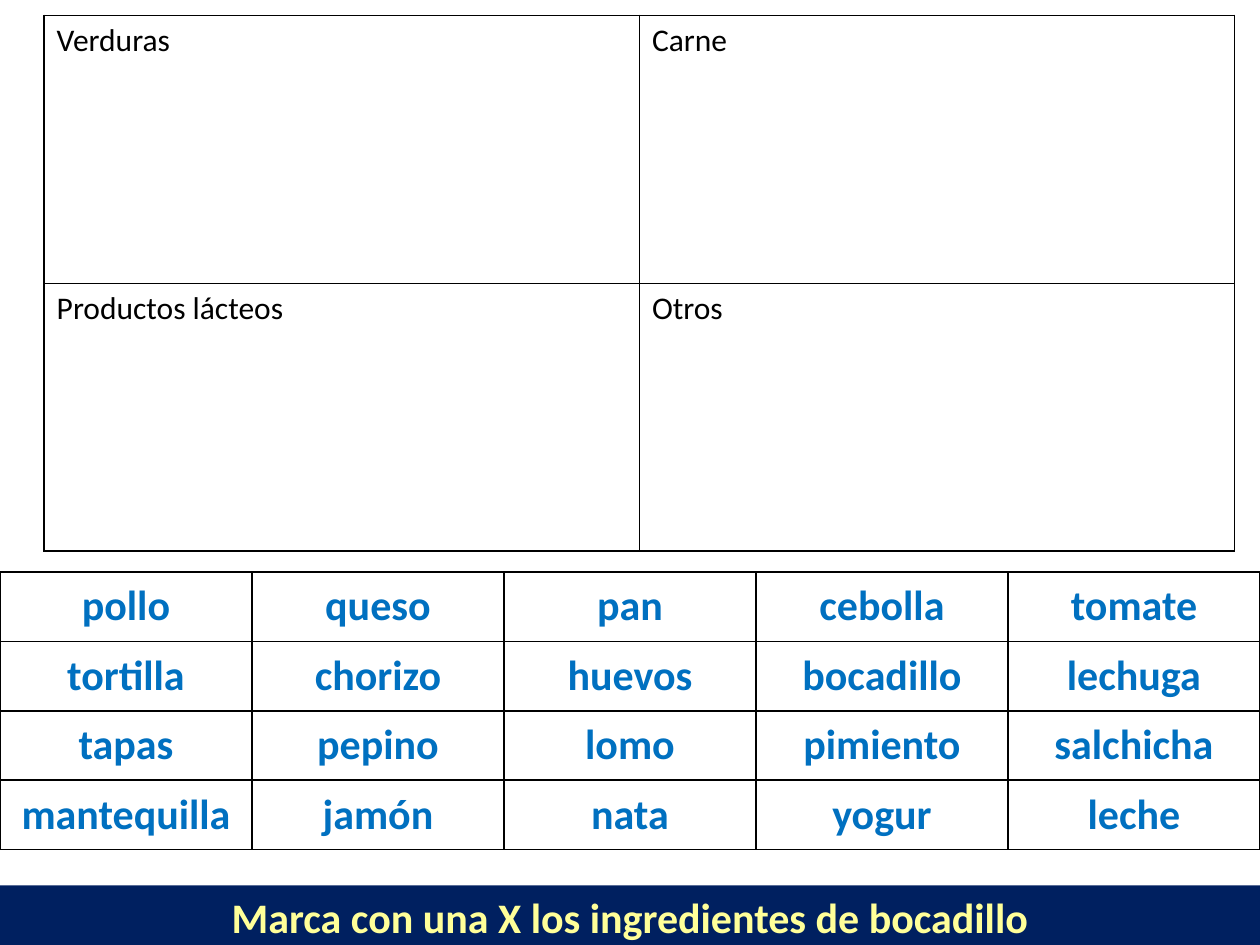
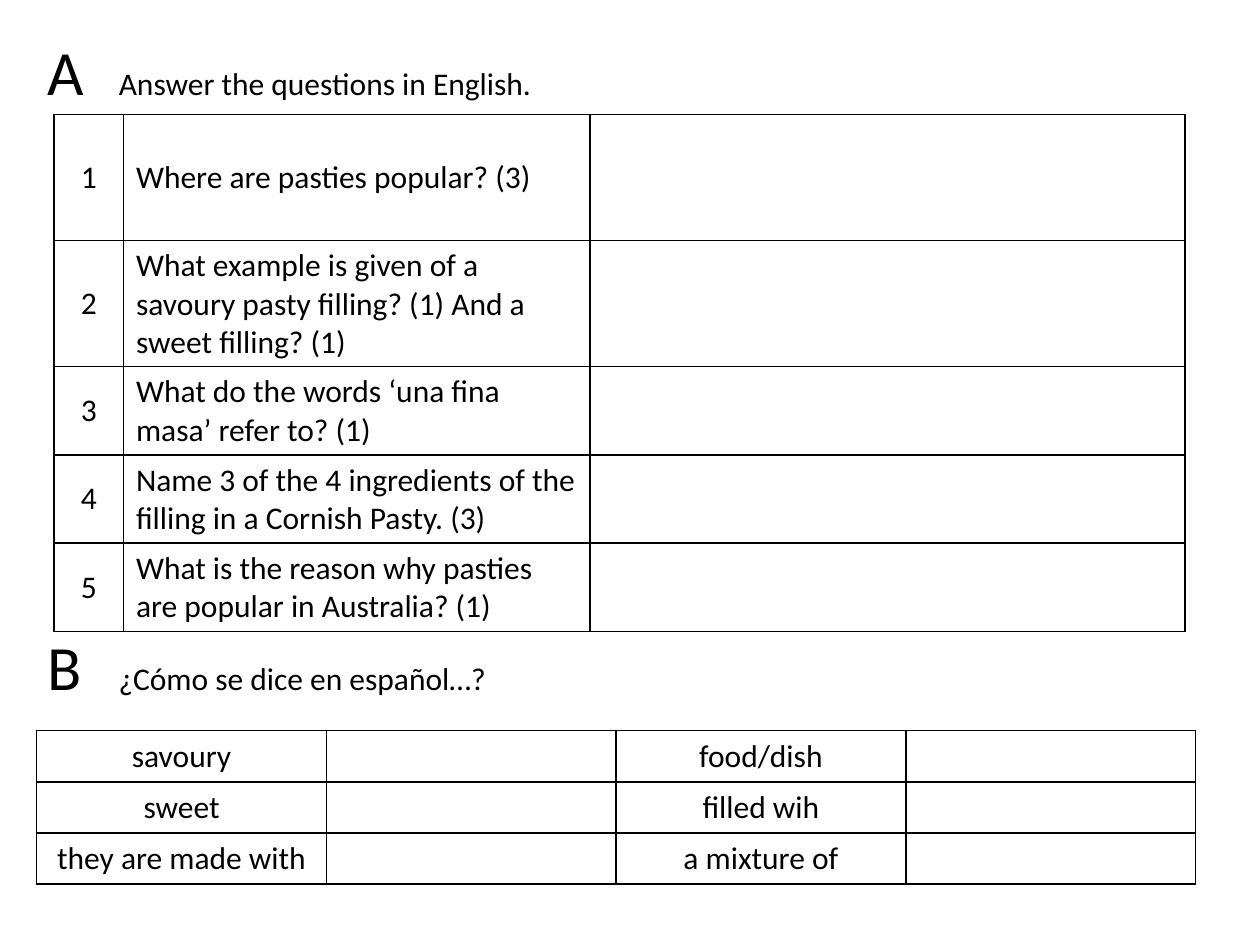
"""Build a two-slide Spanish food worksheet with answer grids."""
from lxml import etree
from pptx import Presentation
from pptx.dml.color import RGBColor
from pptx.enum.text import MSO_ANCHOR, MSO_AUTO_SIZE, PP_ALIGN
from pptx.oxml.ns import qn
from pptx.util import Cm, Pt

LEFT, CENTER = PP_ALIGN.LEFT, PP_ALIGN.CENTER
TOP, MIDDLE = MSO_ANCHOR.TOP, MSO_ANCHOR.MIDDLE
GROW = MSO_AUTO_SIZE.SHAPE_TO_FIT_TEXT
TITLE_ONLY = 5
BLACK, BLUE, NAVY, YELLOW = "000000", "0070C0", "002060", "FFFF99"
PLAIN = {"name": "Calibri", "size": Pt(18), "bold": False, "color": BLACK}
LETTER = {**PLAIN, "size": Pt(36)}
WORD = {**PLAIN, "size": Pt(24), "bold": True, "color": BLUE}
BANNER = {**WORD, "color": YELLOW}

CATEGORIES = [("Verduras", "Carne"), ("Productos lácteos", "Otros")]
FOODS = [
    ("pollo", "queso", "pan", "cebolla", "tomate"),
    ("tortilla", "chorizo", "huevos", "bocadillo", "lechuga"),
    ("tapas", "pepino", "lomo", "pimiento", "salchicha"),
    ("mantequilla", "jamón", "nata", "yogur", "leche"),
]
INSTRUCTION = "Marca con una X los ingredientes de bocadillo"
QUESTIONS = [
    "Where are pasties popular? (3)",
    "What example is given of a savoury pasty filling? (1) And a sweet filling? (1)",
    "What do the words ‘una fina masa’ refer to? (1)",
    "Name 3 of the 4 ingredients of the filling in a Cornish Pasty. (3)",
    "What is the reason why pasties are popular in Australia? (1)",
]
PHRASES = [
    ("savoury", "food/dish"),
    ("sweet", "filled wih"),
    ("they are made with", "a mixture of"),
]
TASK_A = ("A", "Answer the questions in English.")
TASK_B = ("B", "¿Cómo se dice en español…?")


def color(value):
    return RGBColor.from_string(value)


def add_run(paragraph, text, style):
    run = paragraph.add_run()
    run.text = text
    for name, value in style.items():
        if name == "color":
            run.font.color.rgb = color(value)
        else:
            setattr(run.font, name, value)


def add_borders(cell):
    properties = cell._tc.get_or_add_tcPr()
    for position, side in enumerate(("lnL", "lnR", "lnT", "lnB")):
        line = etree.Element(qn(f"a:{side}"), w=str(Pt(1)))
        fill = etree.SubElement(line, qn("a:solidFill"))
        etree.SubElement(fill, qn("a:srgbClr"), val=BLACK)
        properties.insert(position, line)


def add_grid(slide, left, top, widths, heights, rows, style=PLAIN,
             anchor=MIDDLE, alignments=None):
    alignments = alignments or [CENTER] * len(widths)
    table = slide.shapes.add_table(
        len(heights), len(widths), Cm(left), Cm(top),
        Cm(sum(widths)), Cm(sum(heights))).table
    table.first_row = table.horz_banding = False
    for column, width in zip(table.columns, widths):
        column.width = Cm(width)
    for table_row, height, texts in zip(table.rows, heights, rows):
        table_row.height = Cm(height)
        for cell, text, alignment in zip(table_row.cells, texts, alignments):
            cell.fill.background()
            add_borders(cell)
            cell.vertical_anchor = anchor
            paragraph = cell.text_frame.paragraphs[0]
            paragraph.alignment = alignment
            if text:
                add_run(paragraph, text, style)


def place_text(shape, box, runs, alignment):
    shape.left, shape.top, shape.width, shape.height = map(Cm, box)
    frame = shape.text_frame
    settings = {"word_wrap": True, "auto_size": GROW, "vertical_anchor": TOP}
    for name, value in settings.items():
        setattr(frame, name, value)
    paragraph = frame.paragraphs[0]
    paragraph.alignment = alignment
    for text, style in runs:
        add_run(paragraph, text, style)
    return paragraph


def add_task(shape, top, task):
    letter, text = task
    runs = [(letter, LETTER), (f"\t{text}", PLAIN)]
    paragraph = place_text(shape, (0.71, top, 24, 1.8), runs, LEFT)
    tabs = etree.SubElement(paragraph._p.get_or_add_pPr(), qn("a:tabLst"))
    etree.SubElement(tabs, qn("a:tab"), pos=str(Cm(1.43)), algn="l")


def build_sorting_slide(slide):
    add_grid(slide, 0.89, 0.31, [12] * 2, [5.4] * 2, CATEGORIES,
             anchor=TOP, alignments=[LEFT] * 2)
    add_grid(slide, 0, 11.53, [5.08] * 5, [1.4] * 4, FOODS, style=WORD)
    banner = slide.shapes.title
    banner.fill.solid()
    banner.fill.fore_color.rgb = color(NAVY)
    place_text(banner, (0, 17.85, 25.4, 1.28), [(INSTRUCTION, BANNER)], CENTER)


def build_question_slide(slide):
    add_task(slide.shapes.title, 0.53, TASK_A)
    questions = [(str(number), question, "")
                 for number, question in enumerate(QUESTIONS, 1)]
    add_grid(slide, 1.09, 2.31, [1.4, 9.4, 12], [2.54] * 2 + [1.78] * 3,
             questions, alignments=[CENTER, LEFT, LEFT])
    add_task(slide.shapes.add_textbox(0, 0, 0, 0), 12.52, TASK_B)
    phrases = [(first, "", second, "") for first, second in PHRASES]
    add_grid(slide, 0.74, 14.73, [5.84] * 4, [1.03] * 3, phrases)


def main():
    presentation = Presentation()
    presentation.slide_width, presentation.slide_height = Cm(25.4), Cm(19.05)
    layout = presentation.slide_layouts[TITLE_ONLY]
    for build in (build_sorting_slide, build_question_slide):
        build(presentation.slides.add_slide(layout))
    presentation.save("out.pptx")


if __name__ == "__main__":
    main()
